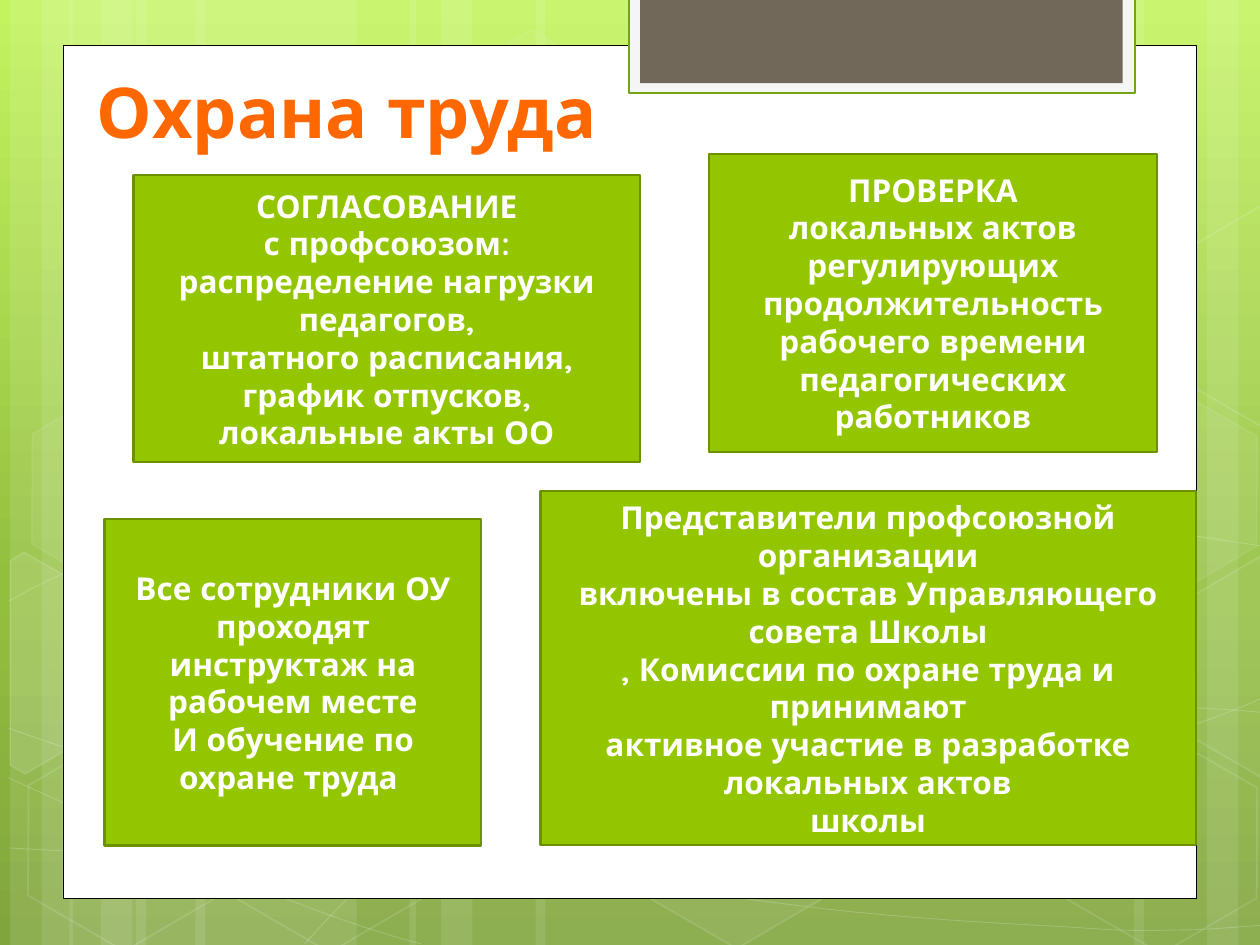
from dataclasses import dataclass
from math import cos, radians, sin

from lxml import etree
from pptx import Presentation
from pptx.dml.color import RGBColor
from pptx.enum import shapes, text
from pptx.oxml import parse_xml
from pptx.oxml.ns import nsdecls, qn
from pptx.util import Inches, Pt


@dataclass(frozen=True)
class Theme:
    font: str = "Quicksand"
    title_size: int = 40
    body_size: int = 18
    title: str = "FF6700"
    white: str = "FFFFFF"
    black: str = "000000"
    box: str = "94C600"
    box_line: str = "6D9200"
    tab: str = "F5F5F5"
    tab_line: str = "74A510"
    tab_inner: str = "71685A"
    background: tuple = ((0, "C3F35F"), (62, "93BF3F"), (100, "81A53E"))


THEME = Theme()
TILT = 30

# left, width
STRIPES = [
    (1.08, 1.75), (0.08, 0.5), (0.33, 0.83), (1.55, 1.75), (0.55, 0.5), (0.8, 0.83),
    (7.33, 1.75), (9.58, 0.5), (9, 0.83), (4.25, 3.08), (3.25, 0.5), (3.5, 0.83),
]

# points, then the number of points each segment takes: 3 for a Bezier, 1 for a line
CURVES = [
    ([(0.07, 6.73), (0.61, 6.76), (1.15, 6.79), (1.9, 6.78), (2.65, 6.77), (3.58, 6.75),
      (4.58, 6.65), (5.58, 6.55), (7, 6.36), (7.92, 6.17), (8.83, 5.98), (9.77, 5.68),
      (10.07, 5.51)], [3] * 4),
    ([(0.07, 4.77), (0.36, 4.61), (0.65, 4.46), (1.21, 4.31), (1.78, 4.16), (2.59, 3.94),
      (3.47, 3.87), (4.36, 3.8), (5.44, 3.79), (6.54, 3.87), (7.64, 3.95), (9.47, 4.26),
      (10.07, 4.34)], [3] * 4),
    ([(0.06, 6.17), (1.27, 6.72), (2.47, 7.27), (3.34, 7.49)], [3]),
    ([(0.07, 5.78), (0.38, 5.89), (0.7, 6), (1.28, 6.16), (1.86, 6.31), (2.73, 6.56),
      (3.57, 6.73), (4.4, 6.9), (5.45, 7.08), (6.28, 7.18), (7.11, 7.29), (8, 7.33),
      (8.53, 7.36), (9.05, 7.4), (9.19, 7.38), (9.45, 7.38), (9.71, 7.37), (9.89, 7.35),
      (10.07, 7.34)], [3] * 6),
    ([(2.42, 7.49), (2.6, 7.29), (2.78, 7.09), (3.02, 6.91), (3.26, 6.73), (3.6, 6.53),
      (3.88, 6.39), (4.16, 6.25), (4.33, 6.19), (4.7, 6.09), (5.06, 5.99), (5.73, 5.85),
      (6.08, 5.78), (6.44, 5.71), (6.49, 5.71), (6.8, 5.69), (7.11, 5.66), (7.6, 5.63),
      (7.94, 5.62), (8.29, 5.61), (8.86, 5.62), (8.86, 5.62), (9.53, 5.62), (9.71, 5.63),
      (9.88, 5.64), (9.97, 5.65), (10.06, 5.66), (10.03, 5.65), (10.06, 5.66)],
     [3] * 7 + [1] + [3] * 2),
]

# left, top, fill opacity, line opacity
HEXAGONS = [
    (3.34, 0.36, 4, 8), (4.97, 5.89, 6, 12), (0.11, 5.91, 0, 12),
    (0.14, 3.12, 7, 8), (1.74, 5.92, 0, 12), (7.53, 4.53, 10, 12),
    (8.34, 5.93, 0, 12), (8.34, 3.14, 7, 8),
]

# hexagons cut off by the slide edge: centre, corners as seen, fill opacity
CUT_HEXAGONS = [
    ((0.36, 5.35), [(0.08, 4.45), (0.19, 4.38), (0.96, 4.82), (0.95, 5.7),
                    (0.2, 6.14), (0.08, 6.07)], 10),
    ((9.85, 5.2), [(9.26, 4.85), (10.01, 4.41), (10.09, 4.46), (10.09, 6.13),
                   (10.02, 6.17), (9.26, 5.73)], 4),
    ((9.85, 2.41), [(9.26, 2.07), (10.01, 1.63), (10.1, 1.68), (10.09, 3.35),
                    (10.02, 3.39), (9.26, 2.95)], 0),
]

BOXES = [
    ((5.63, 1.22, 3.55, 2.37), [
        "ПРОВЕРКА",
        "локальных актов регулирующих продолжительность",
        "рабочего времени педагогических работников",
    ]),
    ((4.29, 3.9, 5.2, 2.81), [
        "Представители профсоюзной организации",
        "включены в состав Управляющего совета Школы",
        ", Комиссии по охране труда и принимают",
        "активное участие в разработке локальных актов",
        "школы",
    ]),
    ((0.83, 4.12, 2.99, 2.59), [
        "Все сотрудники ОУ проходят инструктаж на рабочем месте",
        "И обучение по охране труда ",
    ]),
    ((1.06, 1.39, 4.02, 2.28), [
        "СОГЛАСОВАНИЕ",
        "с профсоюзом:",
        "распределение нагрузки педагогов,",
        "штатного расписания,",
        "график отпусков,",
        "локальные акты ОО",
    ]),
]


def set_background(slide):
    stops = "".join(
        f'<a:gs pos="{position * 1000}"><a:srgbClr val="{color}"/></a:gs>'
        for position, color in THEME.background
    )
    slide.element.cSld.insert(0, parse_xml(
        f'<p:bg {nsdecls("p", "a")}><p:bgPr><a:gradFill rotWithShape="1">'
        f'<a:gsLst>{stops}</a:gsLst><a:lin ang="5400000" scaled="0"/></a:gradFill>'
        '<a:effectLst/></p:bgPr></p:bg>'
    ))


def set_opacity(shape, fill_parent, percent):
    color = shape.element.spPr.find(f"{fill_parent}/{qn('a:srgbClr')}")
    etree.SubElement(color, qn("a:alpha")).set("val", str(percent * 1000))


def style(shape, fill=None, line=None, width=1.0, fill_opacity=100, line_opacity=100):
    shape.shadow.inherit = False
    if fill and fill_opacity:
        shape.fill.solid()
        shape.fill.fore_color.rgb = RGBColor.from_string(fill)
        if fill_opacity < 100:
            set_opacity(shape, qn("a:solidFill"), fill_opacity)
    else:
        shape.fill.background()
    if line:
        shape.line.color.rgb = RGBColor.from_string(line)
        shape.line.width = Pt(width)
        if line_opacity < 100:
            set_opacity(shape, f"{qn('a:ln')}/{qn('a:solidFill')}", line_opacity)
    else:
        shape.line.fill.background()


def add_preset(slide, kind, place, **look):
    shape = slide.shapes.add_shape(kind, *map(Inches, place))
    style(shape, **look)
    return shape


def add_rectangle(slide, place, **look):
    return add_preset(slide, shapes.MSO_SHAPE.RECTANGLE, place, **look)


def add_hexagon(slide, left, top, fill_opacity, line_opacity):
    hexagon = add_preset(slide, shapes.MSO_SHAPE.HEXAGON, (left, top, 1.75, 1.52),
                         fill=THEME.white, line=THEME.white,
                         fill_opacity=fill_opacity, line_opacity=line_opacity)
    hexagon.adjustments[0] = 0.285
    hexagon.adjustments[1] = 1.155
    hexagon.rotation = TILT


def add_outline(slide, points, close, **look):
    start, *rest = [(Inches(x), Inches(y)) for x, y in points]
    builder = slide.shapes.build_freeform(*start)
    builder.add_line_segments(rest, close=close)
    shape = builder.convert_to_shape()
    style(shape, **look)
    return shape


def add_curve(slide, points, sizes):
    """Draw an outline through all points, then join each three lines into one Bezier."""
    shape = add_outline(slide, points, False, line=THEME.white, width=0.5, line_opacity=20)
    lines = iter(list(shape.element.spPr.iter(qn("a:lnTo"))))
    for size in sizes:
        segment = [next(lines) for _ in range(size)]
        if size == 3:
            segment[0].addprevious(bezier := etree.Element(qn("a:cubicBezTo")))
            for line in segment:
                bezier.append(line[0])
                line.getparent().remove(line)


def add_cut_hexagon(slide, centre, corners, opacity):
    """Turn the corners back about the centre, so that the tilt puts them in place."""
    cosine, sine = cos(radians(TILT)), sin(radians(TILT))
    offsets = [(x - centre[0], y - centre[1]) for x, y in corners]
    upright = [(centre[0] + x * cosine + y * sine, centre[1] - x * sine + y * cosine)
               for x, y in offsets]
    add_outline(slide, upright, True, fill=THEME.white, line=THEME.white,
                fill_opacity=opacity, line_opacity=12).rotation = TILT


def write(shape, lines, size, color, align, anchor):
    frame = shape.text_frame
    frame.word_wrap = True
    frame.vertical_anchor = anchor
    for index, line in enumerate(lines):
        paragraph = frame.add_paragraph() if index else frame.paragraphs[0]
        paragraph.alignment = align
        run = paragraph.add_run()
        run.text = line
        run.font.name = THEME.font
        run.font.size = Pt(size)
        run.font.bold = True
        run.font.color.rgb = RGBColor.from_string(color)


def add_backdrop(slide):
    for left, width in STRIPES:
        add_rectangle(slide, (left, 0, width, 7.5), fill=THEME.white, fill_opacity=10)
    for points, sizes in CURVES:
        add_curve(slide, points, sizes)
    for hexagon in HEXAGONS:
        add_hexagon(slide, *hexagon)
    for cut_hexagon in CUT_HEXAGONS:
        add_cut_hexagon(slide, *cut_hexagon)


def main():
    presentation = Presentation()
    presentation.slide_width, presentation.slide_height = Inches(10), Inches(7.5)
    slide = presentation.slides.add_slide(presentation.slide_layouts[6])
    set_background(slide)
    add_backdrop(slide)
    add_rectangle(slide, (0.5, 0.36, 9, 6.77), fill=THEME.white, line=THEME.black, width=0.5)
    add_rectangle(slide, (4.99, -0.02, 4.02, 0.76), fill=THEME.tab, line=THEME.tab_line, width=1.25)
    add_rectangle(slide, (5.08, -0.02, 3.83, 0.68), fill=THEME.tab_inner)
    title = slide.shapes.add_textbox(*map(Inches, (0.67, 0.45, 5.59, 0.81)))
    write(title, ["Охрана труда"], THEME.title_size, THEME.title,
          text.PP_ALIGN.LEFT, text.MSO_ANCHOR.BOTTOM)
    for place, lines in BOXES:
        box = add_rectangle(slide, place, fill=THEME.box, line=THEME.box_line, width=1.25)
        write(box, lines, THEME.body_size, THEME.white,
              text.PP_ALIGN.CENTER, text.MSO_ANCHOR.MIDDLE)
    presentation.save("out.pptx")


if __name__ == "__main__":
    main()
